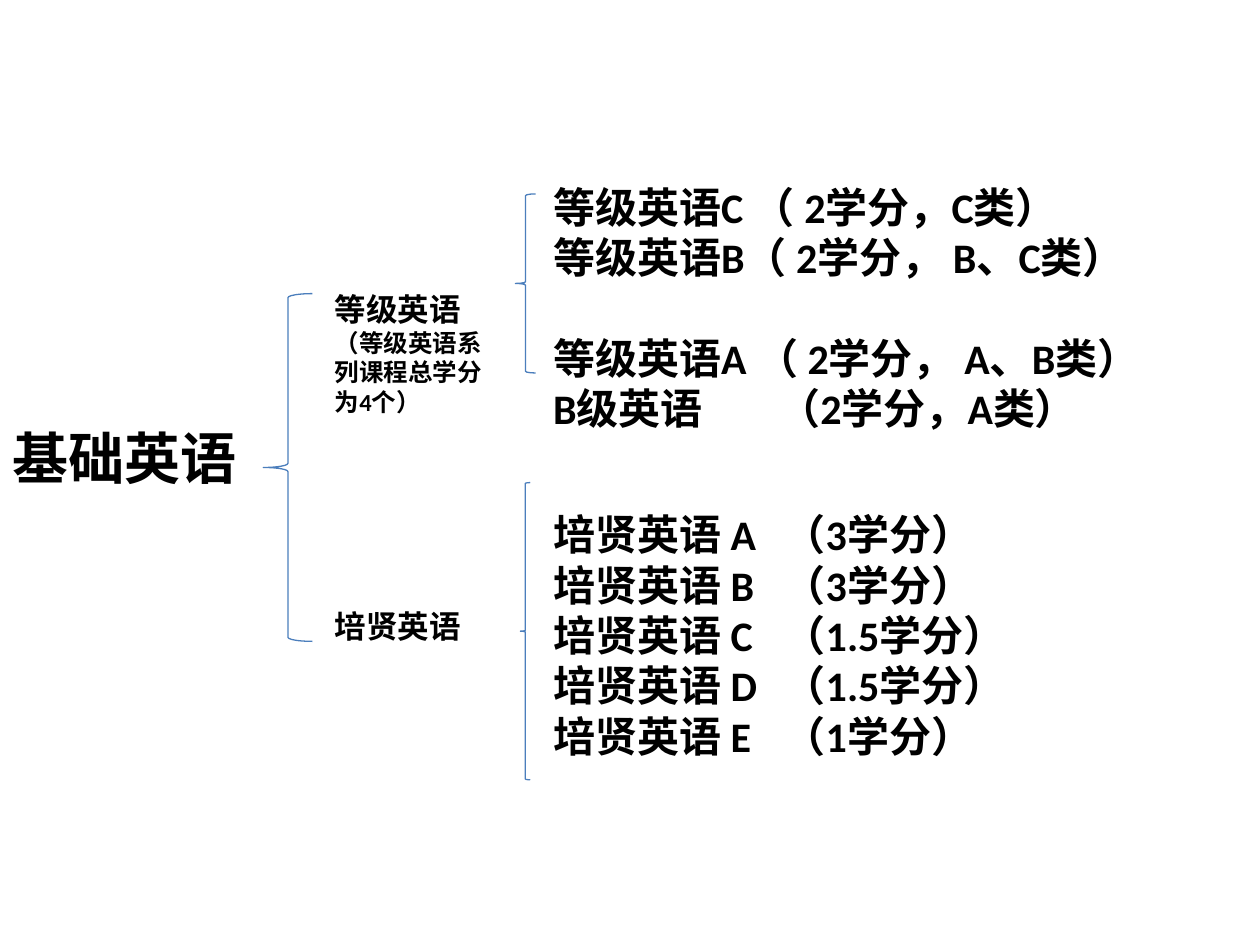
from dataclasses import dataclass

from lxml import etree
from pptx import Presentation
from pptx.dml.color import RGBColor
from pptx.enum import shapes, text
from pptx.oxml import ns
from pptx.util import Cm, Pt


@dataclass(frozen=True)
class Theme:
    font: str = "Calibri"
    ink: RGBColor = RGBColor(0x00, 0x00, 0x00)
    brace: RGBColor = RGBColor(0x4B, 0x7E, 0xBC)
    brace_width: float = 0.75
    root: int = 32
    course: int = 24
    branch: int = 18
    note: int = 14


THEME = Theme()
BRANCH_X = 6.5
COURSE_X = 10.9

GRADED_COURSES = [
    "等级英语C （ 2学分，C类）",
    "等级英语B（ 2学分， B、C类）",
    "等级英语A （ 2学分， A、B类）",
    "B级英语\t（2学分，A类）",
]
HONOURS_CREDITS = {"A": "3", "B": "3", "C": "1.5", "D": "1.5", "E": "1"}


def add_run(p, words, size):
    r = p.add_run()
    r.text = words
    r.font.name = THEME.font
    r.font.size = Pt(size)
    r.font.bold = True
    r.font.color.rgb = THEME.ink


def add_label(s, x, y, w, h, paragraphs):
    tf = s.shapes.add_textbox(Cm(x), Cm(y), Cm(w), Cm(h)).text_frame
    tf.word_wrap = True
    tf.vertical_anchor = text.MSO_ANCHOR.TOP
    for i, runs in enumerate(paragraphs):
        p = tf.add_paragraph() if i else tf.paragraphs[0]
        for words, size in runs:
            add_run(p, words, size)
    return tf


def add_courses(s, y, w, h, courses, tab):
    tf = add_label(s, COURSE_X, y, w, h, [[(c, THEME.course)] for c in courses])
    for p in tf.paragraphs:
        stops = etree.SubElement(p._p.get_or_add_pPr(), ns.qn("a:tabLst"))
        etree.SubElement(stops, ns.qn("a:tab"), pos=str(Cm(tab)), algn="l")
    return tf


def add_brace(s, x, y, w, h):
    sp = s.shapes.add_shape(
        shapes.MSO_SHAPE.LEFT_BRACE, Cm(x), Cm(y), Cm(w), Cm(h))
    sp.shadow.inherit = False
    sp.fill.background()
    sp.line.color.rgb = THEME.brace
    sp.line.width = Pt(THEME.brace_width)


def main():
    prs = Presentation()
    prs.slide_width, prs.slide_height = Cm(25.4), Cm(19.05)
    s = prs.slides.add_slide(prs.slide_layouts[6])

    add_label(s, 0, 8.41, 5.2, 1.6, [[("基础英语", THEME.root)]])
    add_brace(s, 5.31, 5.92, 0.99, 7.01)

    add_label(s, BRANCH_X, 5.72, 3.6, 2.82, [[
        ("等级英语", THEME.branch),
        ("（等级英语系列课程总学分为4个）", THEME.note),
    ]])
    add_label(s, BRANCH_X, 12.12, 3.6, 1.02, [[("培贤英语", THEME.branch)]])

    add_brace(s, 10.39, 3.91, 0.41, 3.61)
    add_brace(s, 10.49, 9.73, 0.2, 5.99)

    graded = add_courses(s, 3.53, 14.2, 5.3, GRADED_COURSES, tab=4.54)
    graded.paragraphs[1].space_after = Pt(1.2 * THEME.course)
    honours = [f"培贤英语 {level}\t（{credits}学分）"
               for level, credits in HONOURS_CREDITS.items()]
    add_courses(s, 10.13, 13, 5.38, honours, tab=4.65)

    prs.save("out.pptx")


if __name__ == "__main__":
    main()
